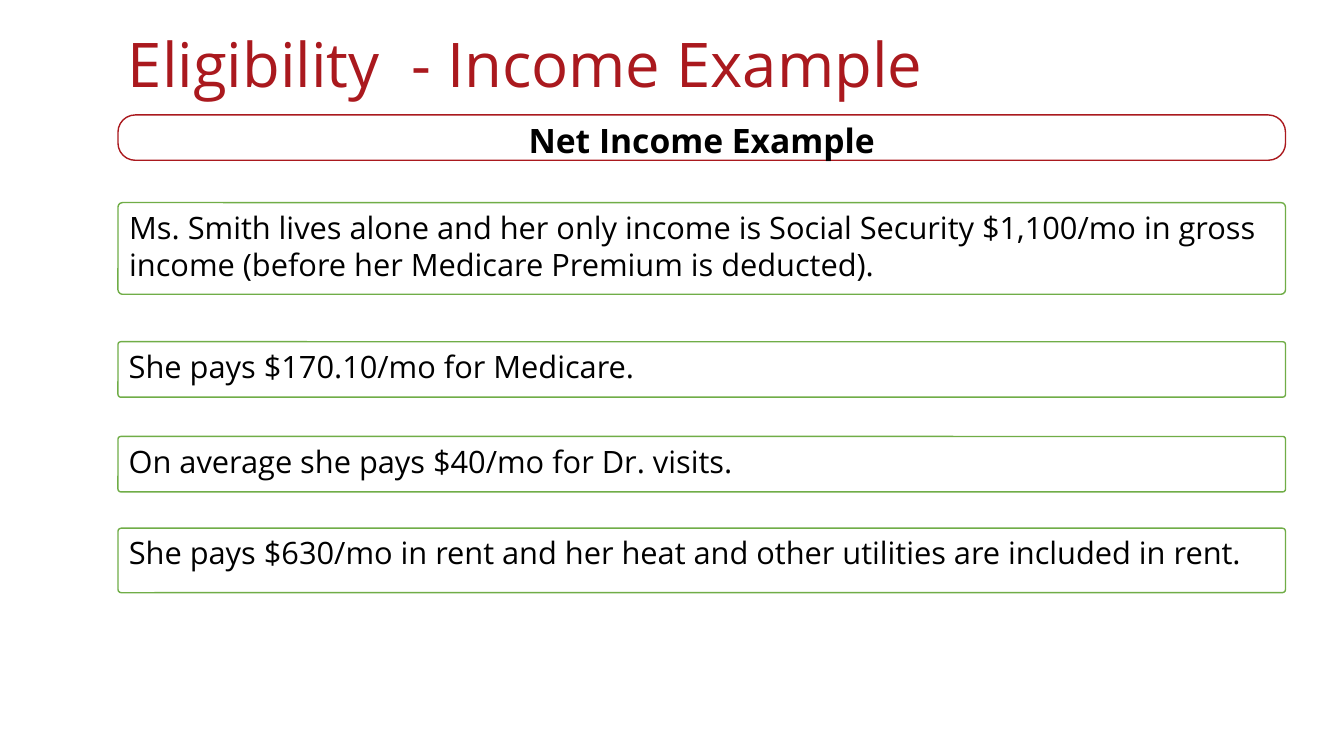
from dataclasses import dataclass

from pptx import Presentation
from pptx.dml.color import RGBColor
from pptx.enum.shapes import MSO_SHAPE
from pptx.enum.text import MSO_ANCHOR, PP_ALIGN
from pptx.util import Inches, Pt


@dataclass(frozen=True)
class Theme:
    """Colours, font and type sizes of the slide."""
    font: str = "Open Sans"
    red: RGBColor = RGBColor(0xAA, 0x19, 0x1E)
    green: RGBColor = RGBColor(0x70, 0xAD, 0x47)
    black: RGBColor = RGBColor(0, 0, 0)
    white: RGBColor = RGBColor(255, 255, 255)
    title_size: int = 44
    heading_size: int = 24
    body_size: int = 22


THEME = Theme()
LEFT = 1.17
BOX_WIDTH = 11.58
FACTS = [
    (2.01, 0.91, "Ms. Smith lives alone and her only income is Social Security "
                 "$1,100/mo in gross income (before her Medicare Premium is deducted)."),
    (3.39, 0.55, "She pays $170.10/mo for Medicare."),
    (4.33, 0.55, "On average she pays $40/mo for Dr. visits."),
    (5.24, 0.64, "She pays $630/mo in rent and her heat and other utilities "
                 "are included in rent."),
]


def write_text(shape, text, size, color, bold=False, align=PP_ALIGN.LEFT,
               anchor=MSO_ANCHOR.TOP, line_spacing=1.0):
    """Fill a shape with one styled paragraph."""
    frame = shape.text_frame
    frame.word_wrap = True
    frame.vertical_anchor = anchor
    paragraph = frame.paragraphs[0]
    paragraph.text = text
    paragraph.alignment = align
    paragraph.line_spacing = line_spacing
    paragraph.font.name = THEME.font
    paragraph.font.size = Pt(size)
    paragraph.font.bold = bold
    paragraph.font.color.rgb = color


def add_title(slide, text):
    """Add the slide title."""
    shape = slide.shapes.add_textbox(
        Inches(LEFT), Inches(0.21), Inches(10.99), Inches(0.93))
    write_text(shape, text, THEME.title_size, THEME.red,
               anchor=MSO_ANCHOR.MIDDLE, line_spacing=0.9)


def add_rounded_box(slide, top, height, line_color, rounding):
    """Add a white rounded box with a thin coloured outline."""
    shape = slide.shapes.add_shape(
        MSO_SHAPE.ROUNDED_RECTANGLE,
        Inches(LEFT), Inches(top), Inches(BOX_WIDTH), Inches(height))
    shape.adjustments[0] = rounding
    shape.shadow.inherit = False
    shape.fill.solid()
    shape.fill.fore_color.rgb = THEME.white
    shape.line.color.rgb = line_color
    shape.line.width = Pt(1)
    return shape


def add_heading(slide, text):
    """Add the red-outlined heading bar."""
    shape = add_rounded_box(slide, 1.14, 0.45, THEME.red, 0.38)
    write_text(shape, text, THEME.heading_size, THEME.black, bold=True,
               align=PP_ALIGN.CENTER, line_spacing=0.9)


def add_fact(slide, top, height, text):
    """Add a green-outlined box with one fact."""
    shape = add_rounded_box(slide, top, height, THEME.green, 0.05)
    write_text(shape, text, THEME.body_size, THEME.black)


def main():
    """Build and save the slide."""
    presentation = Presentation()
    presentation.slide_width = Inches(13.33)
    presentation.slide_height = Inches(7.5)
    slide = presentation.slides.add_slide(presentation.slide_layouts[6])
    add_title(slide, "Eligibility  - Income Example")
    add_heading(slide, "Net Income Example")
    for top, height, text in FACTS:
        add_fact(slide, top, height, text)
    presentation.save("out.pptx")


if __name__ == "__main__":
    main()
